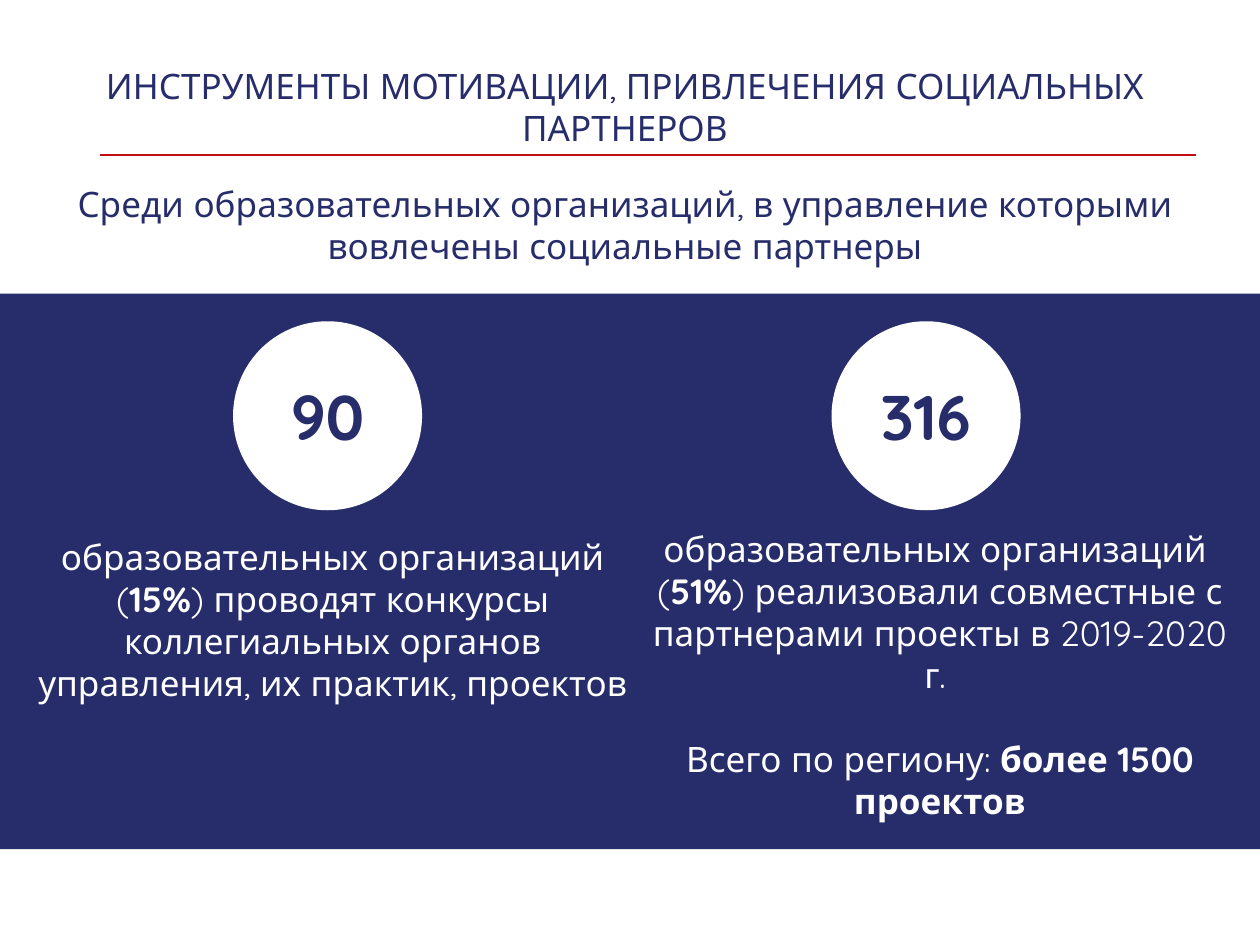
from lxml import etree
from pptx import Presentation
from pptx.dml.color import RGBColor
from pptx.enum.shapes import MSO_CONNECTOR, MSO_SHAPE
from pptx.enum.text import MSO_ANCHOR, MSO_AUTO_SIZE, PP_ALIGN
from pptx.oxml.ns import qn
from pptx.util import Inches, Pt

CENTER, TOP, NO_FIT = PP_ALIGN.CENTER, MSO_ANCHOR.TOP, MSO_AUTO_SIZE.NONE
RECTANGLE, OVAL, STRAIGHT = MSO_SHAPE.RECTANGLE, MSO_SHAPE.OVAL, MSO_CONNECTOR.STRAIGHT

FONT = "Quicksand"
COLORS = {"navy": "272D6B", "red": "C20F12", "white": "FFFFFF"}
BODY_SIZE, NUMBER_SIZE = 20, 36
PARAGRAPH_GAP = 24

# Content: a paragraph is a list of (text, bold) runs
TITLE = "ИНСТРУМЕНТЫ МОТИВАЦИИ, ПРИВЛЕЧЕНИЯ СОЦИАЛЬНЫХ ПАРТНЕРОВ"
SUBTITLE = "Среди образовательных организаций, в управление которыми вовлечены социальные партнеры"
COLUMNS = [
    {
        "number": "90",
        "circle_left": 1.85,
        "text_box": (0.2, 4.2, 4.88, 1.78),
        "paragraphs": [
            [("образовательных организаций", False)],
            [("(", False), ("15%", True),
             (") проводят конкурсы коллегиальных органов управления, их практик, проектов", False)],
        ],
    },
    {
        "number": "316",
        "circle_left": 6.6,
        "text_box": (5.08, 4.14, 4.76, 2.46),
        "paragraphs": [
            [("образовательных организаций ", False)],
            [("(", False), ("51%", True),
             (") реализовали совместные с партнерами проекты в 2019-2020 г. ", False)],
            [("Всего по региону: ", False), ("более 1500 проектов", True)],
        ],
        "gap_before": 2,
    },
]

# Layout in inches
HEADING_LEFT, HEADING_WIDTH, HEADING_HEIGHT = 0.43, 9.06, 0.77
TITLE_TOP, SUBTITLE_TOP = 0.46, 1.4
CIRCLE_TOP, CIRCLE_SIZE = 2.55, 1.5
NUMBER_WIDTH, NUMBER_HEIGHT = 1.32, 0.71


def color(name):
    return RGBColor.from_string(COLORS[name])


def write(shape, paragraphs, color_name, size=BODY_SIZE, gap_before=None):
    frame = shape.text_frame
    frame.word_wrap = True
    frame.auto_size = NO_FIT
    frame.vertical_anchor = TOP
    for index, runs in enumerate(paragraphs):
        paragraph = frame.add_paragraph() if index else frame.paragraphs[0]
        paragraph.alignment = CENTER
        if index == gap_before:
            paragraph.space_before = Pt(PARAGRAPH_GAP)
        for text, bold in runs:
            run = paragraph.add_run()
            run.text = text
            run.font.name = FONT
            run.font.size = Pt(size)
            run.font.bold = bold
            run.font.color.rgb = color(color_name)


def add_text(slide, box, *args, **options):
    write(slide.shapes.add_textbox(*map(Inches, box)), *args, **options)


def add_block(slide, kind, box, color_name):
    shape = slide.shapes.add_shape(kind, *map(Inches, box))
    shape.shadow.inherit = False
    shape.fill.solid()
    shape.fill.fore_color.rgb = color(color_name)
    shape.line.fill.background()


def main():
    presentation = Presentation()
    presentation.slide_width, presentation.slide_height = Inches(10), Inches(7.5)
    slide = presentation.slides.add_slide(presentation.slide_layouts[5])

    # Title, rule and subtitle
    title = slide.shapes.title
    title.left, title.top = Inches(HEADING_LEFT), Inches(TITLE_TOP)
    title.width, title.height = Inches(HEADING_WIDTH), Inches(HEADING_HEIGHT)
    write(title, [[(TITLE, False)]], "navy")

    rule = slide.shapes.add_connector(
        STRAIGHT, Inches(0.79), Inches(1.23), Inches(9.49), Inches(1.23))
    rule.line.color.rgb = color("red")
    rule.line.width = Pt(1.5)
    etree.SubElement(rule.element.spPr, qn("a:effectLst"))

    add_text(slide, (HEADING_LEFT, SUBTITLE_TOP, HEADING_WIDTH, HEADING_HEIGHT),
             [[(SUBTITLE, False)]], "navy")

    # Band with one circled figure and its explanation per column
    add_block(slide, RECTANGLE, (0, 2.33, 10, 4.41), "navy")
    for column in COLUMNS:
        left = column["circle_left"]
        add_block(slide, OVAL, (left, CIRCLE_TOP, CIRCLE_SIZE, CIRCLE_SIZE), "white")
        number_box = (left + (CIRCLE_SIZE - NUMBER_WIDTH) / 2,
                      CIRCLE_TOP + (CIRCLE_SIZE - NUMBER_HEIGHT) / 2,
                      NUMBER_WIDTH, NUMBER_HEIGHT)
        add_text(slide, number_box, [[(column["number"], True)]], "navy", size=NUMBER_SIZE)
        add_text(slide, column["text_box"], column["paragraphs"], "white",
                 gap_before=column.get("gap_before"))

    presentation.save("out.pptx")


if __name__ == "__main__":
    main()
